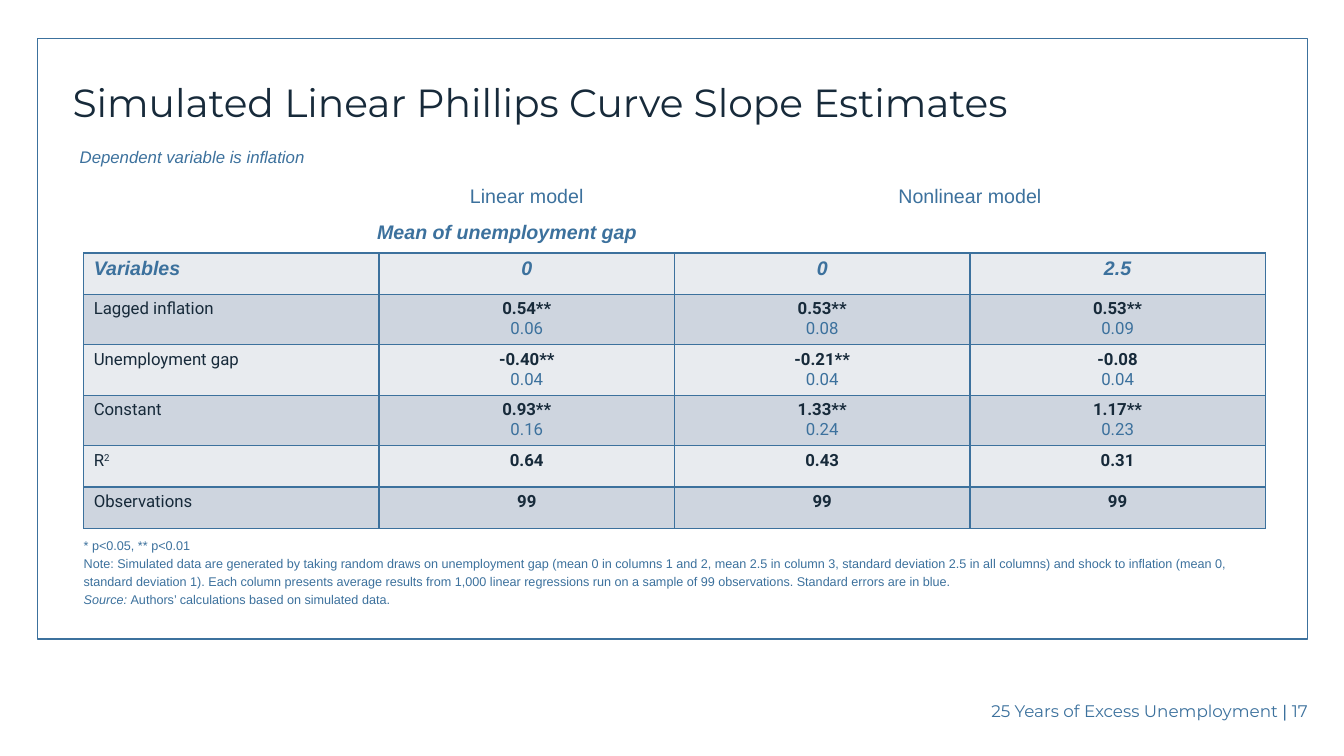
import pptx
import pptx.dml.color
import pptx.enum.shapes
import pptx.enum.text
import pptx.oxml
import pptx.oxml.ns
import pptx.util

Inches = pptx.util.Inches
Pt = pptx.util.Pt
ALIGN = pptx.enum.text.PP_ALIGN
ANCHOR = pptx.enum.text.MSO_ANCHOR

COLORS = {"blue": "3C719D", "navy": "172A3A", "light": "E8EBEF", "dark": "CED5DF"}
HEADINGS = ["Variables", "0", "0", "2.5"]
ESTIMATES = [
    ("Lagged inflation", ["0.54**", "0.06"], ["0.53**", "0.08"], ["0.53**", "0.09"]),
    ("Unemployment gap", ["-0.40**", "0.04"], ["-0.21**", "0.04"], ["-0.08", "0.04"]),
    ("Constant", ["0.93**", "0.16"], ["1.33**", "0.24"], ["1.17**", "0.23"]),
    ("R", ["0.64"], ["0.43"], ["0.31"]),
    ("Observations", ["99"], ["99"], ["99"]),
]
NOTES = [
    "* p<0.05, ** p<0.01",
    "Note: Simulated data are generated by taking random draws on unemployment gap "
    "(mean 0 in columns 1 and 2, mean 2.5 in column 3, standard deviation 2.5 in all "
    "columns) and shock to inflation (mean 0,",
    "standard deviation 1). Each column presents average results from 1,000 linear "
    "regressions run on a sample of 99 observations. Standard errors are in blue.",
]


def color(name):
    """Return the named palette colour."""
    return pptx.dml.color.RGBColor.from_string(COLORS[name])


def style(font, size, face="Arial", tint="blue", bold=False, italic=False):
    """Set every property of a font."""
    font.size, font.name = Pt(size), face
    font.color.rgb = color(tint)
    font.bold, font.italic = bold, italic


def add_text(page, box, text, size, align=ALIGN.LEFT, anchor=ANCHOR.TOP, spacing=0.9, **look):
    """Add a one-paragraph text box without margins and return its frame."""
    frame = page.shapes.add_textbox(*map(Inches, box)).text_frame
    frame.word_wrap = True
    frame.vertical_anchor = anchor
    frame.margin_left = frame.margin_right = frame.margin_top = frame.margin_bottom = 0
    para = frame.paragraphs[0]
    para.text, para.alignment, para.line_spacing = text, align, spacing
    style(para.font, size, **look)
    return frame


def add_border(cell):
    """Draw a thin blue line on all four sides of a cell."""
    properties = cell._tc.get_or_add_tcPr()
    for position, side in enumerate(("lnL", "lnR", "lnT", "lnB")):
        line = pptx.oxml.parse_xml(
            f'<a:{side} {pptx.oxml.ns.nsdecls("a")} w="12700"><a:solidFill>'
            f'<a:srgbClr val="{COLORS["blue"]}"/></a:solidFill></a:{side}>')
        properties.insert(position, line)


def add_frame(page, box):
    """Outline the content area."""
    frame = page.shapes.add_shape(pptx.enum.shapes.MSO_SHAPE.RECTANGLE, *map(Inches, box))
    frame.shadow.inherit = False
    frame.fill.background()
    frame.line.color.rgb = color("blue")
    frame.line.width = Pt(1)


def add_column_labels(page, box):
    """Label the models above the table columns."""
    left, top, width, height = box
    column = width / 4
    add_text(page, (left + column, top, column, height), "Linear model", 14, ALIGN.CENTER)
    add_text(page, (left + 2 * column, top, 2 * column, height), "Nonlinear model", 14,
             ALIGN.CENTER)
    add_text(page, (left + column - 0.02, top + 0.36, column + 0.76, height),
             "Mean of unemployment gap", 14, bold=True, italic=True)


def add_estimates(page, box):
    """Build the table of estimates with standard errors."""
    shape = page.shapes.add_table(len(ESTIMATES) + 1, len(HEADINGS), *map(Inches, box))
    table = shape.table
    for index, row in enumerate([HEADINGS, *ESTIMATES]):
        table.rows[index].height = Inches(0.49 if len(row[1]) == 2 else 0.41)
        for column, content in enumerate(row):
            cell = table.cell(index, column)
            cell.fill.solid()
            cell.fill.fore_color.rgb = color("dark" if index % 2 else "light")
            add_border(cell)
            lines = [content] if isinstance(content, str) else content
            cell.text_frame.text = "\n".join(lines)
            for order, para in enumerate(cell.text_frame.paragraphs):
                para.alignment = ALIGN.CENTER if column else ALIGN.LEFT
                if index == 0:
                    style(para.font, 14, bold=True, italic=True)
                else:
                    style(para.font, 12, "Roboto", "blue" if order else "navy",
                          bold=column > 0 and order == 0)
            if content == "R":
                span = cell.text_frame.paragraphs[0].add_run()
                span.text = "2"
                span.font._element.set("baseline", "30000")


def add_notes(page, box):
    """Write the notes and source under the table."""
    frame = add_text(page, box, NOTES[0], 9, spacing=1.0)
    for note in NOTES[1:] + [""]:
        para = frame.add_paragraph()
        para.text = note
        para.space_before = Pt(2)
        style(para.font, 9)
    for text, italic in (("Source: ", True), ("Authors’ calculations based on simulated data.", False)):
        span = para.add_run()
        span.text = text
        style(span.font, 9, italic=italic)


def add_footer(page, box):
    """Write the deck name and page number at the lower right."""
    frame = add_text(page, box, "", 12, ALIGN.RIGHT, ANCHOR.BOTTOM, 1.0, face="Montserrat")
    for text, face in (("25 Years of Excess Unemployment ", "Montserrat"),
                       ("| ", "Arial"), ("17", "Montserrat")):
        span = frame.paragraphs[0].add_run()
        span.text = text
        style(span.font, 12, face)


def build_table_page(deck):
    """Compose the slide of slope estimates."""
    page = deck.slides.add_slide(deck.slide_layouts[6])
    add_frame(page, (0.37, 0.38, 12.6, 5.96))
    add_text(page, (0.72, 0.77, 11.84, 0.48), "Simulated Linear Phillips Curve Slope Estimates",
             28, anchor=ANCHOR.BOTTOM, face="Montserrat", tint="navy")
    add_text(page, (0.79, 1.48, 3.15, 0.26), "Dependent variable is inflation", 12, italic=True)
    add_column_labels(page, (0.83, 1.85, 11.72, 0.26))
    add_estimates(page, (0.83, 2.51, 11.72, 2.7))
    add_notes(page, (0.83, 5.34, 11.68, 0.92))
    add_footer(page, (6.67, 6.76, 6.3, 0.39))


def main():
    """Create and save the deck."""
    deck = pptx.Presentation()
    deck.slide_width, deck.slide_height = Inches(13.33), Inches(7.5)
    build_table_page(deck)
    deck.save("out.pptx")


if __name__ == "__main__":
    main()
